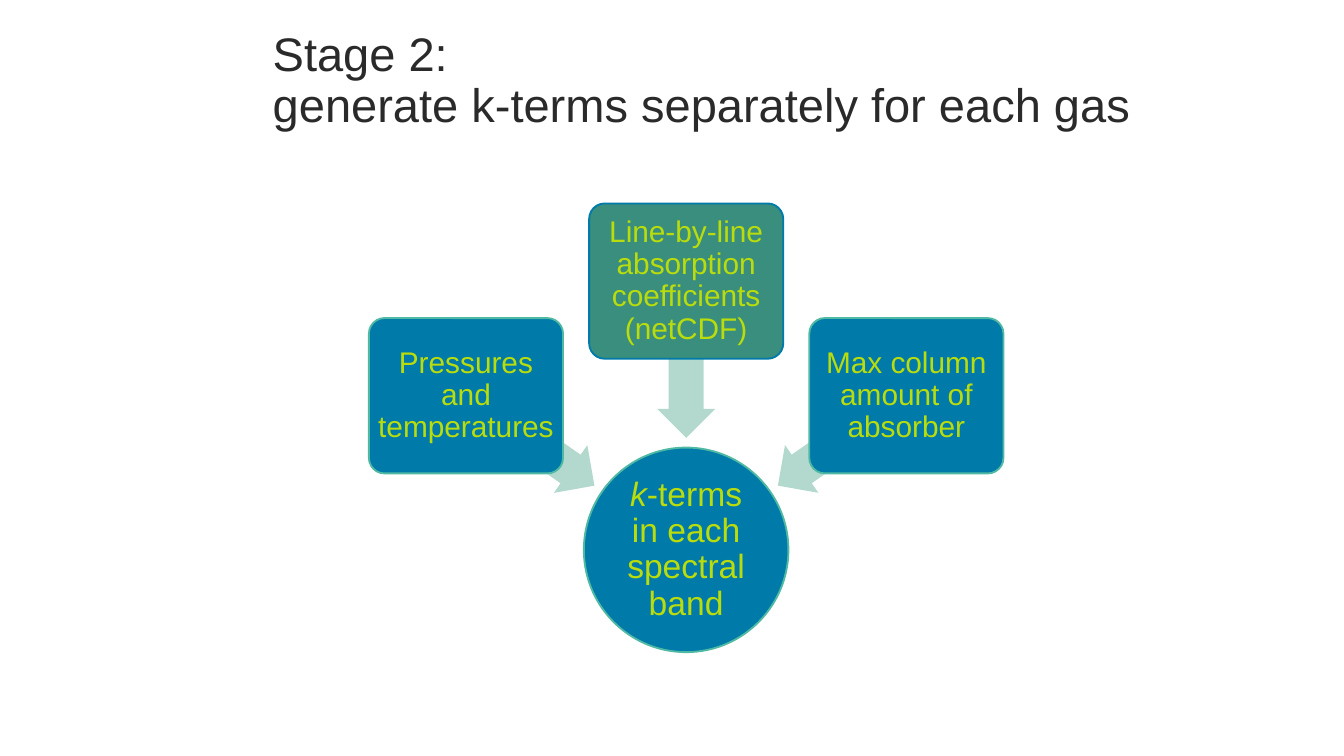
from math import cos, radians, sin

from pptx import Presentation
from pptx.dml.color import RGBColor
from pptx.enum.shapes import MSO_SHAPE
from pptx.enum.text import MSO_ANCHOR, PP_ALIGN
from pptx.util import Pt

BLUE, GREEN, MINT, TEAL = "007AA9", "398E7D", "B3D9CF", "50B9A4"
LIME, INK = "B9DC0C", "2A2A2A"

INPUTS = [
    (215, "Pressures and temperatures", BLUE, TEAL),
    (270, "Line-by-line absorption coefficients (netCDF)", GREEN, BLUE),
    (325, "Max column amount of absorber", BLUE, TEAL),
]


def color(value):
    return RGBColor.from_string(value)


def add_run(paragraph, text, size, ink, italic=False):
    run = paragraph.add_run()
    run.text = text
    run.font.name = "Arial"
    run.font.size = Pt(size)
    run.font.italic = italic
    run.font.color.rgb = color(ink)


def add_centred(slide, kind, center, size, fill, line=None):
    (x, y), (width, height) = center, size
    shape = slide.shapes.add_shape(
        kind, Pt(x - width / 2), Pt(y - height / 2), Pt(width), Pt(height))
    shape.shadow.inherit = False
    shape.fill.solid()
    shape.fill.fore_color.rgb = color(fill)
    if line:
        shape.line.color.rgb = color(line)
        shape.line.width = Pt(1)
    else:
        shape.line.fill.background()
    return shape


def write_label(shape, runs, size, inset):
    frame = shape.text_frame
    frame.word_wrap = True
    frame.vertical_anchor = MSO_ANCHOR.MIDDLE
    frame.margin_left = frame.margin_right = Pt(inset)
    frame.margin_top = frame.margin_bottom = Pt(inset)
    paragraph = frame.paragraphs[0]
    paragraph.alignment = PP_ALIGN.CENTER
    paragraph.line_spacing = 0.9
    for text, italic in runs:
        add_run(paragraph, text, size, LIME, italic)


def add_title(slide, left, top, width, height):
    title = slide.shapes.add_textbox(Pt(left), Pt(top), Pt(width), Pt(height))
    frame = title.text_frame
    frame.word_wrap = True
    frame.vertical_anchor = MSO_ANCHOR.BOTTOM
    paragraph = frame.paragraphs[0]
    paragraph.line_spacing = 0.9
    add_run(paragraph, "Stage 2:", 25.2, INK)
    paragraph.add_line_break()
    add_run(paragraph, "generate k-terms separately for each gas", 25.2, INK)


def add_converging_diagram(slide, left, top, width, height):
    hub_size, input_size, arrow_size = 109.6, (104, 83.2), (84, 31.2)
    arrow_radius, input_radius = 102, 144
    hub_x = left + width / 2
    hub_y = top + height - hub_size / 2

    def around_hub(angle, radius):
        turn = radians(angle)
        return hub_x + radius * cos(turn), hub_y + radius * sin(turn)

    hub = add_centred(slide, MSO_SHAPE.OVAL, (hub_x, hub_y),
                      (hub_size, hub_size), BLUE, TEAL)
    write_label(hub, [("k", True), ("-terms in each spectral band", False)], 18, 0.9)

    for angle, label, fill, line in INPUTS:
        arrow = add_centred(slide, MSO_SHAPE.LEFT_ARROW,
                            around_hub(angle, arrow_radius), arrow_size, MINT)
        arrow.adjustments[0] = 0.6
        arrow.adjustments[1] = 0.5
        arrow.rotation = angle
        source = add_centred(slide, MSO_SHAPE.ROUNDED_RECTANGLE,
                             around_hub(angle, input_radius), input_size, fill, line)
        source.adjustments[0] = 0.1
        write_label(source, [(label, False)], 16, 2)


def main():
    presentation = Presentation()
    presentation.slide_width = Pt(720)
    presentation.slide_height = Pt(405)
    slide = presentation.slides.add_slide(presentation.slide_layouts[6])
    add_title(slide, 139, 19.4, 569.5, 55.4)
    add_converging_diagram(slide, 198, 109, 339.2, 240.4)
    presentation.save("out.pptx")


if __name__ == "__main__":
    main()
